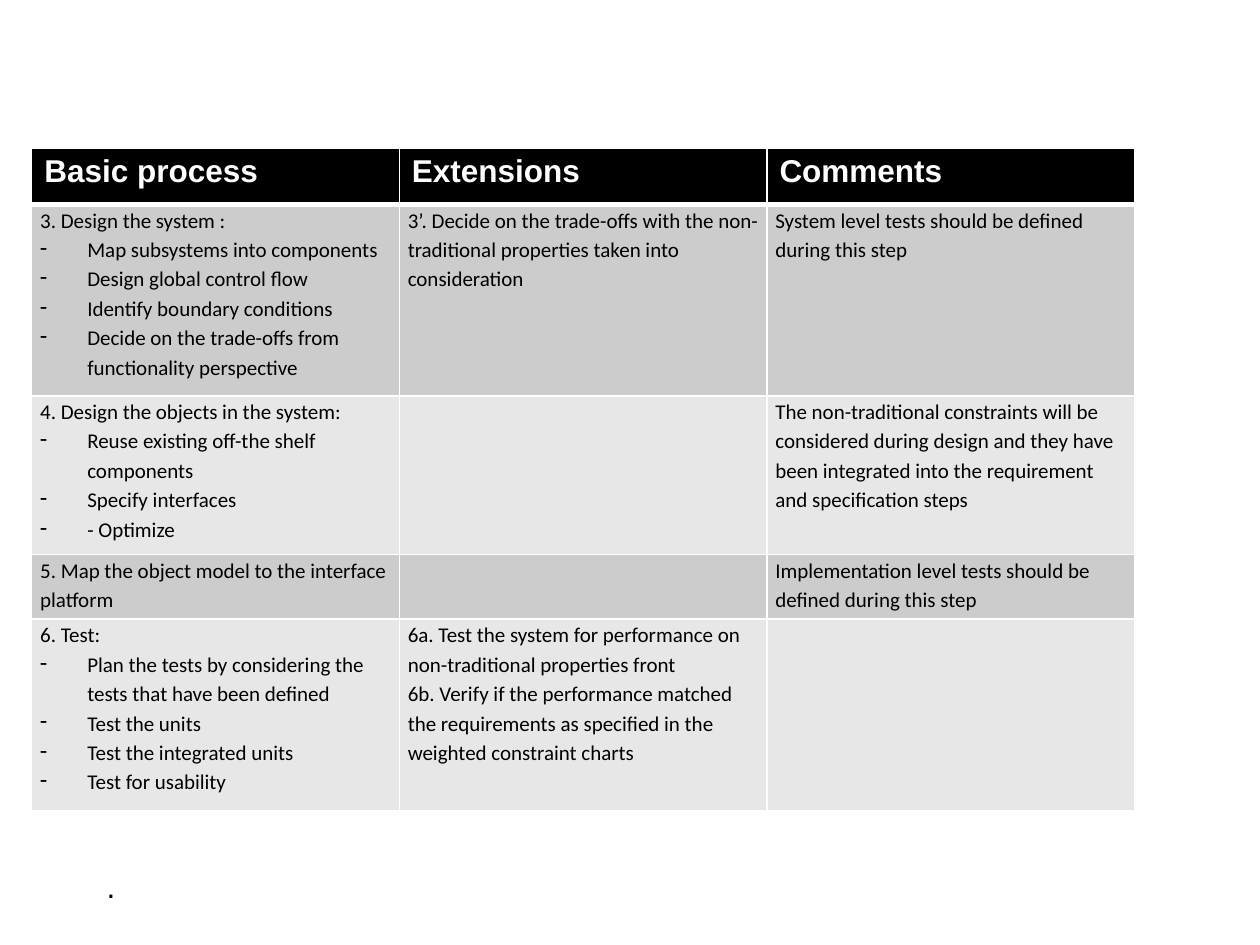
from lxml.etree import SubElement
from pptx import Presentation
from pptx.dml.color import RGBColor
from pptx.enum.text import MSO_AUTO_SIZE
from pptx.oxml import parse_xml
from pptx.oxml.ns import nsdecls, qn
from pptx.util import Cm, Pt

BLACK = RGBColor(0x00, 0x00, 0x00)
WHITE = RGBColor(0xFF, 0xFF, 0xFF)
DARK_BAND = RGBColor(0xCC, 0xCC, 0xCC)
LIGHT_BAND = RGBColor(0xE7, 0xE7, 0xE7)

# Content: each cell is a list of paragraphs; BULLET marks a list item
BULLET = "* "
HEADINGS = ["Basic process", "Extensions", "Comments"]
STEPS = [
    (["3. Design the system :",
      "* Map subsystems into components",
      "* Design global control flow",
      "* Identify boundary conditions",
      "* Decide on the trade-offs from functionality perspective"],
     ["3’. Decide on the trade-offs with the non-traditional properties "
      "taken into consideration"],
     ["System level tests should be defined during this step"]),
    (["4. Design the objects in the system:",
      "* Reuse existing off-the shelf components",
      "* Specify interfaces",
      "* - Optimize"],
     [],
     ["The non-traditional constraints will be considered during design and they "
      "have been integrated into the requirement and specification steps"]),
    (["5. Map the object model to the interface platform"],
     [],
     ["Implementation level tests should be defined during this step"]),
    (["6. Test:",
      "* Plan the tests by considering the tests that have been defined",
      "* Test the units",
      "* Test the integrated units",
      "* Test for usability"],
     ["6a. Test the system for performance on non-traditional properties front",
      "6b. Verify if the performance matched the requirements as specified in the "
      "weighted constraint charts"],
     []),
]
FOOTNOTE = "."

# Formats
HEADING_FONT = {"name": "Arial", "size": Pt(18), "bold": True}
STEP_FONT = {"name": "Calibri", "size": Pt(12), "bold": False}
FOOTNOTE_FONT = {"name": "Arial", "size": Pt(18)}
STEP_MARGINS = {"margin_left": Cm(0.17), "margin_right": Cm(0.17),
                "margin_top": 0, "margin_bottom": 0}
COLUMN_WIDTH = Cm(7.41)
ROW_HEIGHTS = [Cm(1.14), Cm(3.86), Cm(3.2), Cm(1.3), Cm(3.86)]
INDENT = Cm(0.95)
THIN, THICK = Pt(1), Pt(3)


def set_formats(target, formats):
    for name, value in formats.items():
        setattr(target, name, value)


def write_run(paragraph, text, font, color):
    run = paragraph.add_run()
    run.text = text
    set_formats(run.font, font)
    run.font.color.rgb = color


def add_dash(paragraph):
    properties = paragraph._p.get_or_add_pPr()
    properties.set("marL", str(INDENT))
    properties.set("indent", str(-INDENT))
    SubElement(properties, qn("a:buChar")).set("char", "-")


def set_borders(cell, top, bottom):
    widths = {"lnL": THIN, "lnR": THIN, "lnT": top, "lnB": bottom}
    for position, (side, width) in enumerate(widths.items()):
        cell._tc.get_or_add_tcPr().insert(position, parse_xml(
            f'<a:{side} {nsdecls("a")} w="{width}"><a:solidFill>'
            f'<a:srgbClr val="{WHITE}"/></a:solidFill></a:{side}>'))


def fill_cell(cell, color, top, bottom):
    cell.fill.solid()
    cell.fill.fore_color.rgb = color
    set_borders(cell, top, bottom)


def write_step(cell, lines):
    set_formats(cell, STEP_MARGINS)
    frame = cell.text_frame
    for number, line in enumerate(lines):
        paragraph = frame.add_paragraph() if number else frame.paragraphs[0]
        paragraph.line_spacing = 1.15
        if line.startswith(BULLET):
            add_dash(paragraph)
        write_run(paragraph, line.removeprefix(BULLET), STEP_FONT, BLACK)


presentation = Presentation()
presentation.slide_width, presentation.slide_height = Cm(25.4), Cm(19.05)
slide = presentation.slides.add_slide(presentation.slide_layouts[6])

# Process table
process = slide.shapes.add_table(
    len(ROW_HEIGHTS), len(HEADINGS), Cm(0.64), Cm(2.98),
    COLUMN_WIDTH * len(HEADINGS), sum(ROW_HEIGHTS)).table
for column in process.columns:
    column.width = COLUMN_WIDTH
for row, height in zip(process.rows, ROW_HEIGHTS):
    row.height = height

# Heading row
for column, heading in enumerate(HEADINGS):
    cell = process.cell(0, column)
    fill_cell(cell, BLACK, THIN, THICK)
    write_run(cell.text_frame.paragraphs[0], heading, HEADING_FONT, WHITE)

# Step rows in alternating bands
for row, step in enumerate(STEPS, start=1):
    for column, lines in enumerate(step):
        cell = process.cell(row, column)
        fill_cell(cell, DARK_BAND if row % 2 else LIGHT_BAND,
                  THICK if row == 1 else THIN, THIN)
        write_step(cell, lines)

# Footnote
footnote = slide.shapes.add_textbox(Cm(1.9), Cm(17.35), Cm(13.77), Cm(1.02)).text_frame
footnote.word_wrap = True
footnote.auto_size = MSO_AUTO_SIZE.SHAPE_TO_FIT_TEXT
write_run(footnote.paragraphs[0], FOOTNOTE, FOOTNOTE_FONT, BLACK)

presentation.save("out.pptx")
